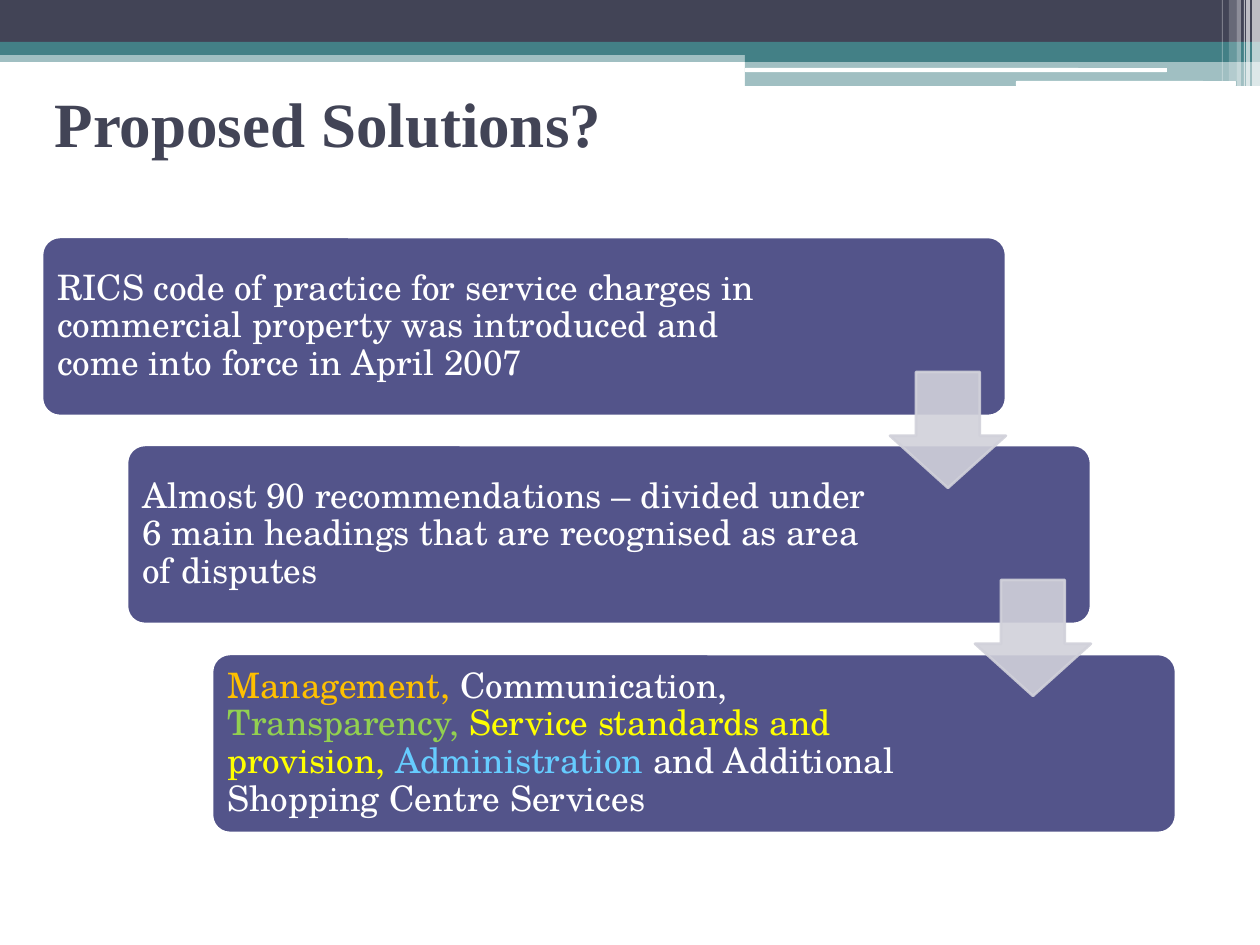
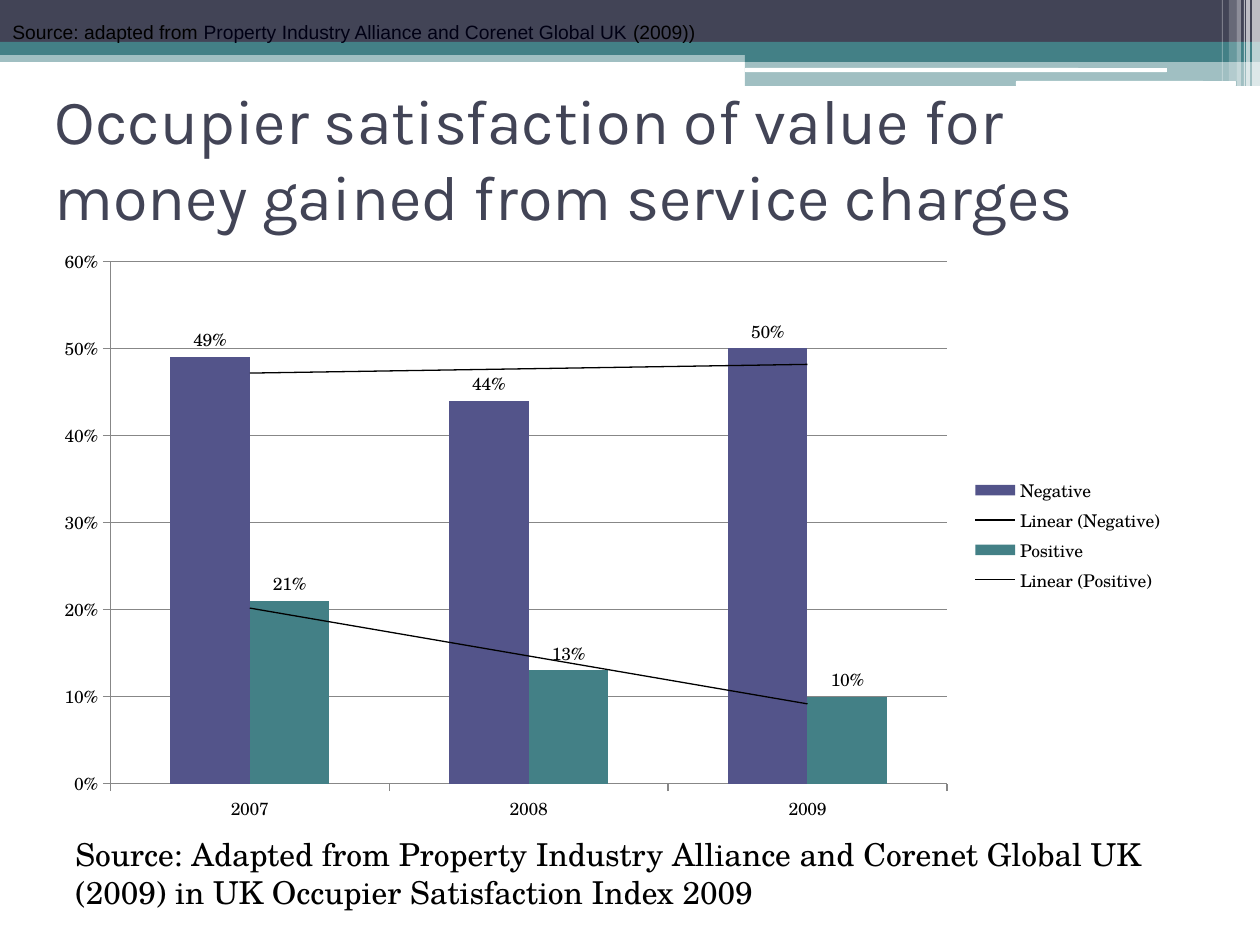
from lxml.etree import SubElement
from pptx import Presentation
from pptx.chart.data import CategoryChartData
from pptx.dml.color import RGBColor
from pptx.enum.chart import XL_CHART_TYPE as ChartType
from pptx.enum.chart import XL_LABEL_POSITION as LabelPosition
from pptx.enum.chart import XL_LEGEND_POSITION as LegendPosition
from pptx.enum.chart import XL_TICK_MARK as TickMark
from pptx.enum.shapes import MSO_SHAPE as Preset
from pptx.enum.text import MSO_ANCHOR as Anchor
from pptx.enum.text import MSO_AUTO_SIZE as AutoSize
from pptx.enum.text import PP_ALIGN as Align
from pptx.oxml import parse_xml
from pptx.oxml.ns import nsdecls, qn
from pptx.util import Pt

COLORS = {
    "white": "FFFFFF", "black": "000000", "ink": "000014",
    "slate": "424456", "teal": "438086", "indigo": "53548A",
    "arrow": "D1D1DA", "grid": "878787", "orange": "FFC000",
    "green": "92D050", "yellow": "FFFF00", "sky": "66CCFF",
}
BODY_FONT = "TeX Gyre Schola"

# left, top, width, height, colour, opacity in percent
BANDS = [
    (0, 50, 1260, 12, "teal", 50),
    (0, 0, 1260, 42, "slate", 100),
    (0, 42, 1260, 13, "teal", 100),
    (745, 49, 515, 13, "teal", 100),
    (745, 62, 515, 24, "teal", 50),
]
ROUNDED_BARS = [
    (745, 68, 422, 4, "white", 100),
    (1016, 81, 220, 5, "white", 100),
]
STRIPES = [
    (1252, 0, 8, 86, "white", 65),
    (1246, 0, 4, 86, "white", 65),
    (1244, 0, 1, 86, "white", 60),
    (1237, 0, 4, 86, "white", 40),
    (1229, 0, 8, 81, "white", 20),
    (1222, 0, 1, 81, "white", 30),
]

SOLUTIONS_TITLE = "Proposed Solutions?"
SOLUTIONS = [
    [("RICS code of practice for service charges in commercial property was "
      "introduced and come into force in April 2007", "white")],
    [("Almost 90 recommendations – divided under 6 main headings that are "
      "recognised as area of disputes", "white")],
    [("Management, ", "orange"), ("Communication, ", "white"),
     ("Transparency, ", "green"), ("Service standards and provision, ", "yellow"),
     ("Administration ", "sky"),
     ("and Additional Shopping Centre Services", "white")],
]
FIRST_BOX, LAST_BOX = (42, 237), (212, 654)
BOX_WIDTH, BOX_HEIGHT = 964, 179
ARROW_SIZE, ARROW_DROP = 116, 135

SATISFACTION_TITLE = ("Occupier satisfaction of value for money gained "
                      "from service charges")
YEARS = ["2007", "2008", "2009"]
SATISFACTION = [
    ("Negative", (0.49, 0.44, 0.50), "indigo"),
    ("Positive", (0.21, 0.13, 0.10), "teal"),
]
CHART_SOURCE = [("Source: Adapted from Property Industry Alliance and Corenet "
                 "Global UK (2009) in UK Occupier Satisfaction Index 2009", "black")]
TOP_SOURCE = [("Source: adapted from ", "black"),
              ("Property Industry Alliance and Corenet Global UK", "ink"),
              (" (2009))", "black")]


def px(length):
    """Turn pixels, 126 to the inch, into EMU."""
    return round(length * 914400 / 126)


def rgb(name):
    return RGBColor.from_string(COLORS[name])


def add_preset(slide, preset, place, color, opacity=100, line=None):
    shape = slide.shapes.add_shape(preset, *map(px, place))
    shape.shadow.inherit = False
    shape.fill.solid()
    shape.fill.fore_color.rgb = rgb(color)
    if line:
        shape.line.color.rgb = rgb(line)
        shape.line.width = Pt(1.5)
    else:
        shape.line.fill.background()
    if opacity < 100:
        for node in shape.element.spPr.iter(qn("a:srgbClr")):
            SubElement(node, qn("a:alpha")).set("val", str(opacity * 1000))
    return shape


def write_spans(frame, spans, size, font=BODY_FONT, bold=False):
    """Fill the first paragraph with (text, colour) spans."""
    frame.word_wrap = True
    para = frame.paragraphs[0]
    para.alignment = Align.LEFT
    for text, color in spans:
        span = para.add_run()
        span.text = text
        span.font.size = Pt(size)
        span.font.name = font
        span.font.bold = bold
        span.font.color.rgb = rgb(color)
    return para


def add_caption(slide, place, spans, size, font=BODY_FONT, anchor=Anchor.TOP):
    frame = slide.shapes.add_textbox(*map(px, place)).text_frame
    frame.vertical_anchor = anchor
    write_spans(frame, spans, size, font)


def set_title(slide, text, font, bold=False, anchor=Anchor.MIDDLE):
    title = slide.shapes.title
    title.left, title.top, title.width, title.height = map(px, (42, 84, 1134, 147))
    frame = title.text_frame
    frame.auto_size = AutoSize.NONE
    frame.vertical_anchor = anchor
    write_spans(frame, [(text, "slate")], 36, font, bold)
    return frame


def move_bands_to_layout(slide):
    """Draw the header once and put it behind the layout's placeholders."""
    header = [(Preset.RECTANGLE, band) for band in BANDS]
    header += [(Preset.ROUNDED_RECTANGLE, bar) for bar in ROUNDED_BARS]
    header += [(Preset.RECTANGLE, stripe) for stripe in STRIPES]
    first = slide.slide_layout.placeholders[0].element
    for preset, (*place, color, opacity) in header:
        first.addprevious(add_preset(slide, preset, place, color, opacity).element)


def build_solutions(slide):
    frame = set_title(slide, SOLUTIONS_TITLE, "Times New Roman", True, Anchor.TOP)
    frame.margin_top = px(1)
    gaps = len(SOLUTIONS) - 1
    corners = [tuple(start + (end - start) * i // gaps
                     for start, end in zip(FIRST_BOX, LAST_BOX))
               for i in range(len(SOLUTIONS))]
    for (left, top), spans in zip(corners, SOLUTIONS):
        box = add_preset(slide, Preset.ROUNDED_RECTANGLE,
                         (left, top, BOX_WIDTH, BOX_HEIGHT), "indigo", line="white")
        box.adjustments[0] = 0.1
        frame = box.text_frame
        frame.margin_left = frame.margin_top = frame.margin_bottom = px(10)
        frame.margin_right = px(212)
        frame.vertical_anchor = Anchor.MIDDLE
        write_spans(frame, spans, 20).line_spacing = 0.9
    for left, top in corners[:-1]:
        place = (left + BOX_WIDTH - ARROW_SIZE, top + ARROW_DROP,
                 ARROW_SIZE, ARROW_SIZE)
        arrow = add_preset(slide, Preset.DOWN_ARROW, place, "arrow", 90, "arrow")
        # the head's length comes first, then the shaft's width
        arrow.adjustments[0], arrow.adjustments[1] = 0.55, 0.45


def add_linear_trend(series):
    trend = parse_xml(
        f'<c:trendline {nsdecls("c", "a")}><c:spPr><a:ln w="9525"><a:solidFill>'
        f'<a:srgbClr val="{COLORS["black"]}"/></a:solidFill></a:ln></c:spPr>'
        '<c:trendlineType val="linear"/><c:dispRSqr val="0"/>'
        '<c:dispEq val="0"/></c:trendline>')
    series._element.find(qn("c:cat")).addprevious(trend)


def add_satisfaction_chart(slide):
    data = CategoryChartData(number_format="0%")
    data.categories = YEARS
    for name, values, _ in SATISFACTION:
        data.add_series(name, values)
    chart = slide.shapes.add_chart(ChartType.COLUMN_CLUSTERED,
                                   *map(px, (42, 237, 1134, 596)), data).chart
    chart.has_title = False
    chart.font.size = Pt(10)
    chart.font.name = BODY_FONT
    chart.font.color.rgb = rgb("black")
    chart.has_legend = True
    chart.legend.position = LegendPosition.RIGHT
    chart.legend.include_in_layout = False

    value_axis = chart.value_axis
    value_axis.minimum_scale, value_axis.maximum_scale = 0, 0.6
    value_axis.major_unit = 0.1
    value_axis.has_major_gridlines = True
    value_axis.tick_labels.number_format = "0%"
    value_axis.tick_labels.number_format_is_linked = False
    for axis in (chart.category_axis, value_axis):
        axis.major_tick_mark = TickMark.OUTSIDE
        axis.minor_tick_mark = TickMark.NONE
    for part in (chart.category_axis, value_axis, value_axis.major_gridlines):
        part.format.line.color.rgb = rgb("grid")
        part.format.line.width = Pt(0.75)

    plot = chart.plots[0]
    plot.gap_width = 150
    plot.overlap = 0
    plot.vary_by_categories = False
    for series, (_, _, color) in zip(plot.series, SATISFACTION):
        series.format.fill.solid()
        series.format.fill.fore_color.rgb = rgb(color)
        labels = series.data_labels
        labels.show_value = True
        labels.number_format = "0%"
        labels.number_format_is_linked = False
        labels.position = LabelPosition.OUTSIDE_END
        add_linear_trend(series)


def build_satisfaction(slide):
    set_title(slide, SATISFACTION_TITLE, "Karla")
    add_satisfaction_chart(slide)
    add_caption(slide, (63, 829, 1155, 89), CHART_SOURCE, 18)
    add_caption(slide, (0, 0, 1260, 63), TOP_SOURCE, 11, "Arial", Anchor.MIDDLE)


def main():
    deck = Presentation()
    deck.slide_width, deck.slide_height = px(1260), px(945)
    layout = deck.slide_layouts.get_by_name("Title Only")
    solutions, satisfaction = (deck.slides.add_slide(layout) for _ in range(2))
    move_bands_to_layout(solutions)
    build_solutions(solutions)
    build_satisfaction(satisfaction)
    deck.save("out.pptx")


if __name__ == "__main__":
    main()
